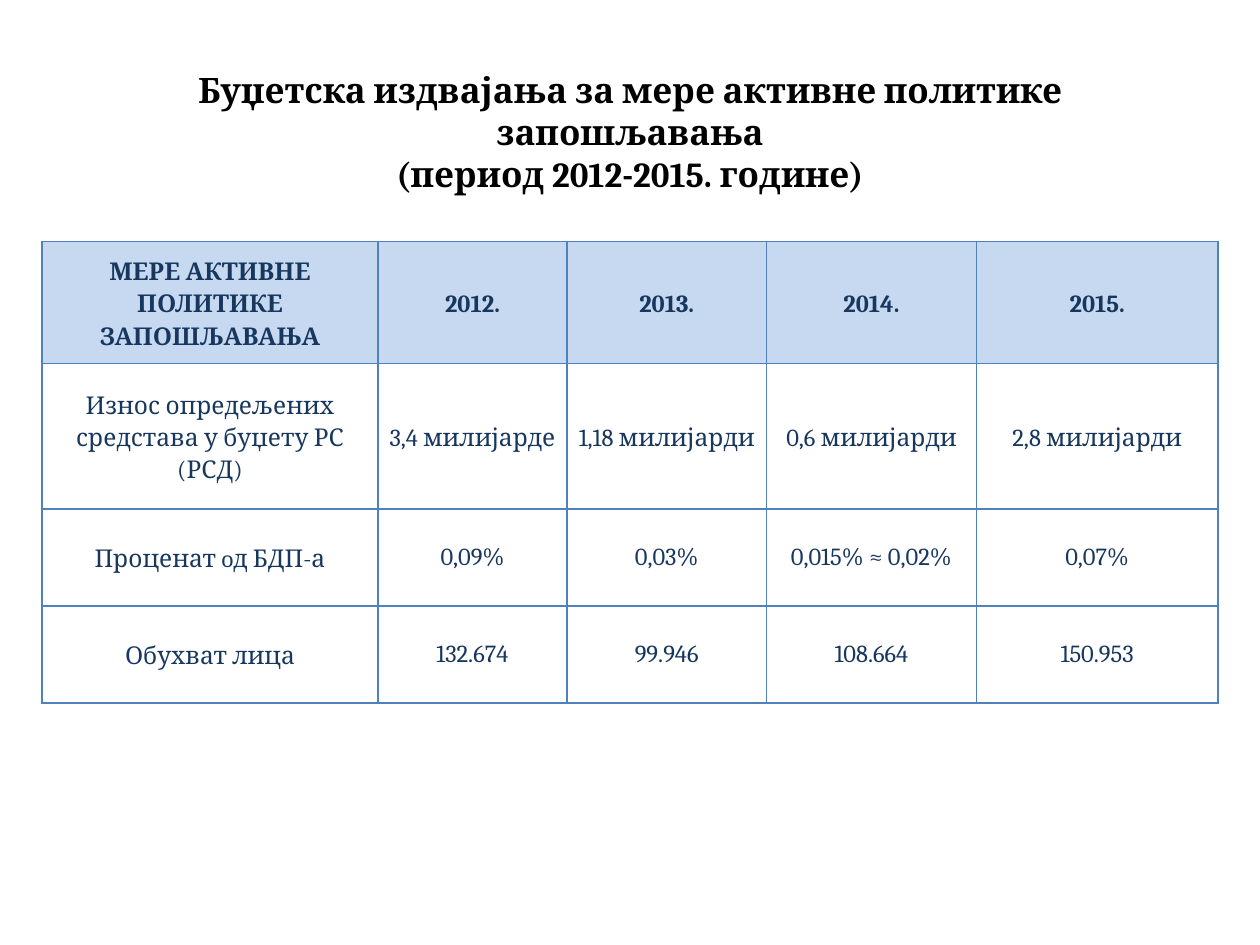
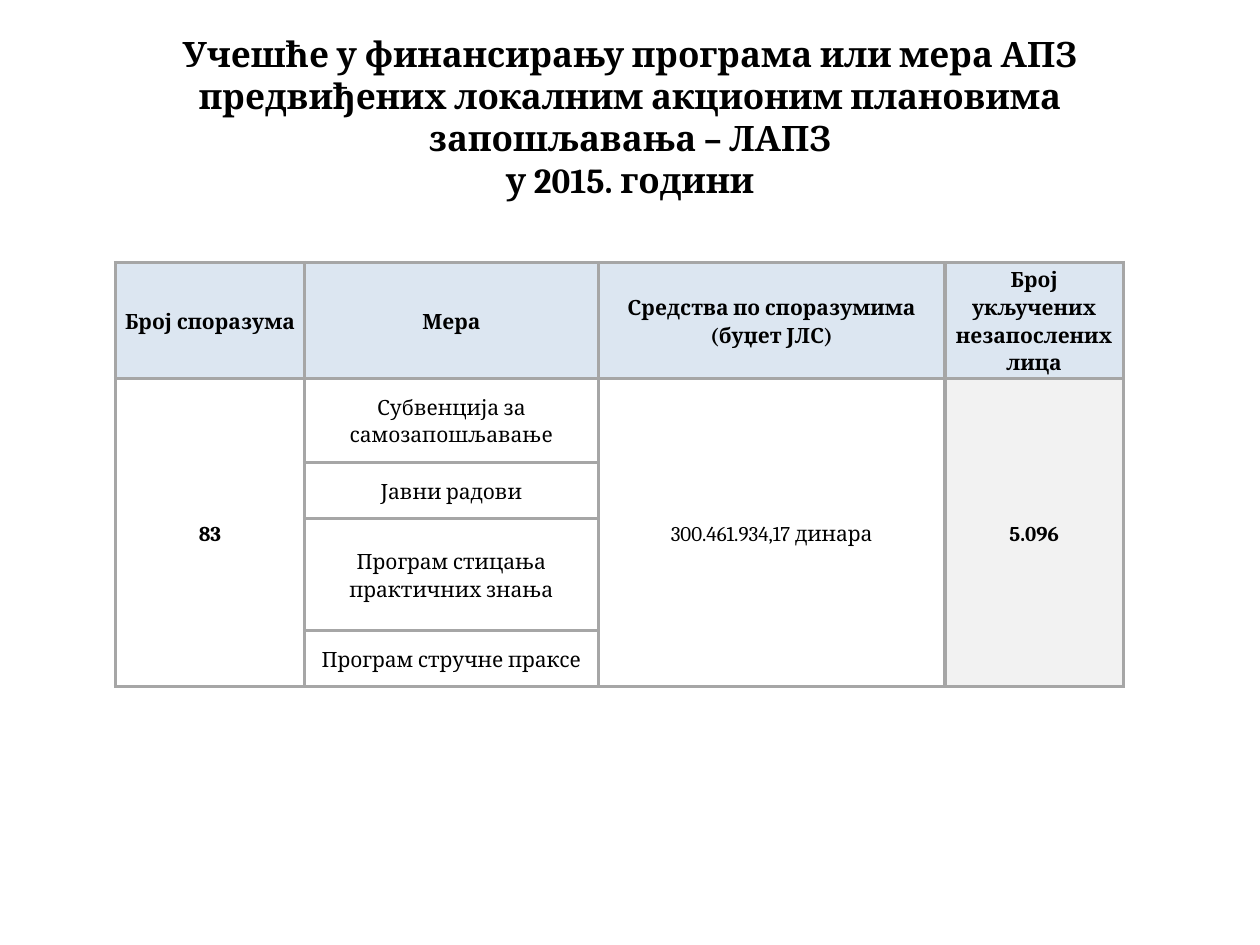
from lxml import etree
from pptx import Presentation
from pptx.dml.color import RGBColor
from pptx.enum.text import MSO_ANCHOR, PP_ALIGN
from pptx.oxml.ns import qn
from pptx.util import Inches, Pt

MIDDLE = MSO_ANCHOR.MIDDLE
CENTER = PP_ALIGN.CENTER
FONT = "Cambria"
BLACK = RGBColor(0x00, 0x00, 0x00)
WHITE = RGBColor(0xFF, 0xFF, 0xFF)
NAVY = RGBColor(0x17, 0x37, 0x5E)
BLUE = RGBColor(0x4F, 0x81, 0xBD)
SKY = RGBColor(0xC6, 0xD9, 0xF1)
PALE = RGBColor(0xDC, 0xE6, 0xF1)
GREY = RGBColor(0xA6, 0xA6, 0xA6)
MIST = RGBColor(0xF2, 0xF2, 0xF2)

WIDE, HIGH = 120, 90  # grid columns and rows on a slide


class Deck:
    def __init__(self):
        self.file = Presentation()
        self.file.slide_width = Inches(10)
        self.file.slide_height = Inches(7.5)
        self.slide = None

    def x(self, cols):
        return round(self.file.slide_width * cols / WIDE)

    def y(self, rows):
        return round(self.file.slide_height * rows / HIGH)

    def page(self):
        self.slide = self.file.slides.add_slide(self.file.slide_layouts[6])

    def label(self, frame, text, size, color, bold, gap=None):
        frame.text = text
        frame.word_wrap = True
        for line in frame.paragraphs:
            line.alignment = CENTER
            line.line_spacing = gap
            font = line.font
            font.name, font.size, font.bold = FONT, Pt(size), bold
            font.color.rgb = color

    def title(self, text, top, height):
        box = self.slide.shapes.add_textbox(
            self.x(6), self.y(top), self.x(108), self.y(height))
        box.text_frame.vertical_anchor = MIDDLE
        self.label(box.text_frame, text, 20, BLACK, True)

    def edge(self, cell, color, width):
        """Draw all four borders of a cell."""
        props = cell._tc.get_or_add_tcPr()
        for side in ("lnL", "lnR", "lnT", "lnB"):
            line = etree.SubElement(props, qn("a:" + side), w=str(Pt(width)))
            fill = etree.SubElement(line, qn("a:solidFill"))
            etree.SubElement(fill, qn("a:srgbClr"), val=str(color))

    def table(self, left, top, cols, rows, data, size, color, line, look):
        """look(row, col) gives the fill, boldness and line spacing of a cell."""
        grid = self.slide.shapes.add_table(
            len(rows), len(cols), self.x(left), self.y(top),
            self.x(sum(cols)), self.y(sum(rows))).table
        grid.first_row = grid.horz_banding = False
        for col, width in zip(grid.columns, cols):
            col.width = self.x(width)
        for row, height in zip(grid.rows, rows):
            row.height = self.y(height)
        for r, texts in enumerate(data):
            for c, text in enumerate(texts):
                cell = grid.cell(r, c)
                fill, bold, gap = look(r, c)
                self.edge(cell, *line)
                cell.fill.solid()
                cell.fill.fore_color.rgb = fill
                cell.vertical_anchor = MIDDLE
                cell.margin_left = cell.margin_right = Inches(0.07)
                cell.margin_top = cell.margin_bottom = 0
                self.label(cell.text_frame, text, size, color, bold, gap)
        return grid


def budget(deck):
    deck.page()
    deck.title("Буџетска издвајања за мере активне политике запошљавања\v"
               "(период 2012-2015. године)", 6, 13)
    data = [
        ["МЕРЕ АКТИВНЕ ПОЛИТИКЕ ЗАПОШЉАВАЊА",
         "2012.", "2013.", "2014.", "2015."],
        ["Износ опредељених средстава у буџету РС (РСД)",
         "3,4 милијарде", "1,18 милијарди", "0,6 милијарди", "2,8 милијарди"],
        ["Проценат oд БДП-а", "0,09%", "0,03%", "0,015% ≈ 0,02%", "0,07%"],
        ["Обухват лица", "132.674", "99.946", "108.664", "150.953"],
    ]

    def look(r, c):
        return (SKY if r == 0 else WHITE, r == 0,
                1.15 if r < 2 or c == 0 else 1.0)

    deck.table(4, 23, [32, 18, 19, 20, 23], [11.64, 13.86, 9.24, 9.24],
               data, 14, NAVY, (BLUE, 1), look)


def local(deck):
    deck.page()
    deck.title("Учешће у финансирању програма или мера АПЗ предвиђених "
               "локалним акционим плановима запошљавања – ЛАПЗ\v"
               "у 2015. години", 3.6, 15)
    data = [
        ["Број споразума", "Мера", "Средства по споразумима\n(буџет ЈЛС)",
         "Број укључених незапослених лица"],
        ["83", "Субвенција за самозапошљавање", "300.461.934,17 динара",
         "5.096"],
        ["", "Јавни радови", "", ""],
        ["", "Програм стицања практичних знања", "", ""],
        ["", "Програм стручне праксе", "", ""],
    ]

    def look(r, c):
        fill = PALE if r == 0 else MIST if c == 3 else WHITE
        return fill, r == 0 or c in (0, 3), 1.15

    grid = deck.table(11, 25, [18, 28, 33, 17], [10.68, 8, 5.34, 10.68, 5.34],
                      data, 12, BLACK, (GREY, 2.25), look)
    for c in (0, 2, 3):
        grid.cell(1, c).merge(grid.cell(4, c))


def main():
    deck = Deck()
    budget(deck)
    local(deck)
    deck.file.save("out.pptx")


if __name__ == "__main__":
    main()
